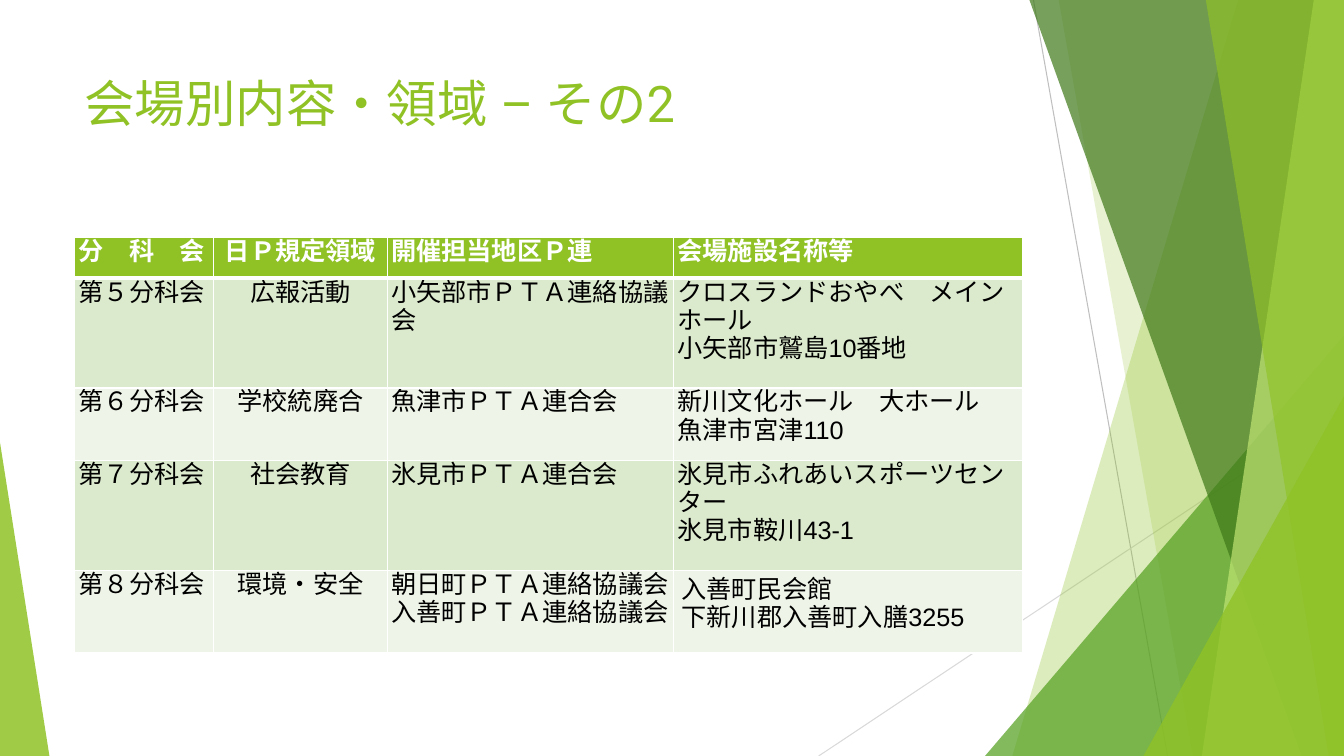
from dataclasses import dataclass

from lxml import etree
from pptx import Presentation
from pptx.dml.color import RGBColor
from pptx.enum.shapes import MSO_CONNECTOR, MSO_SHAPE
from pptx.enum.text import MSO_ANCHOR, PP_ALIGN
from pptx.oxml.ns import qn
from pptx.util import Pt

PX = 9144  # EMU per px, 100 px to the inch
WIDTH, HEIGHT = 1333, 750
TRIANGLE = MSO_SHAPE.ISOSCELES_TRIANGLE
STRAIGHT = MSO_CONNECTOR.STRAIGHT
CENTER, LEFT = PP_ALIGN.CENTER, PP_ALIGN.LEFT
TOP = MSO_ANCHOR.TOP
GREEN, WHITE, BLACK = "90C226", "FFFFFF", "000000"
BAND_FILLS = ("DBE9CD", "EEF4E8")


@dataclass
class Ray:
    start: tuple[int, int]
    end: tuple[int, int]
    color: str


@dataclass
class Band:
    """A facet reaching the right edge, with a slanted left side."""
    top_x: int
    bottom_x: int
    color: str
    opacity: int


@dataclass
class Triangle:
    left: int
    top: int
    width: int
    apex: float
    color: str
    opacity: int


RAYS = [
    Ray((1025, 0), (1158, HEIGHT), "BFBFBF"),
    Ray((WIDTH, 403), (812, HEIGHT), "D9D9D9"),
]
FACETS = [
    Band(1228, 1004, GREEN, 30),
    Band(1050, 1183, GREEN, 20),
    Triangle(977, 333, 356, 1, "54A021", 72),
    Band(1021, 1291, "3F7819", 70),
    Band(1303, 1192, "C0E474", 70),
    Band(1196, 1318, GREEN, 65),
    Triangle(1134, 393, 199, 1, GREEN, 80),
    Triangle(0, 439, 49, 0, GREEN, 85),
]

TITLE = "会場別内容・領域 – その2"
COLUMN_WIDTHS = [138, 172, 284, 346]
ROW_HEIGHTS = [40, 109, 72, 109, 82]
ROWS = [
    ["分　科　会", "日Ｐ規定領域", "開催担当地区Ｐ連", "会場施設名称等"],
    ["第５分科会", "広報活動", "小矢部市ＰＴＡ連絡協議会",
     "クロスランドおやべ　メインホール\n小矢部市鷲島10番地"],
    ["第６分科会", "学校統廃合", "魚津市ＰＴＡ連合会",
     "新川文化ホール　大ホール\n魚津市宮津110"],
    ["第７分科会", "社会教育", "氷見市ＰＴＡ連合会",
     "氷見市ふれあいスポーツセンター\n氷見市鞍川43-1"],
    ["第８分科会", "環境・安全", "朝日町ＰＴＡ連絡協議会\n入善町ＰＴＡ連絡協議会",
     "入善町民会館\n下新川郡入善町入膳3255"],
]


def rgb(color: str) -> RGBColor:
    return RGBColor.from_string(color)


def draw_ray(slide, ray: Ray) -> None:
    points = [value * PX for value in (*ray.start, *ray.end)]
    connector = slide.shapes.add_connector(STRAIGHT, *points)
    connector.line.color.rgb = rgb(ray.color)
    connector.line.width = Pt(0.75)
    etree.SubElement(connector._element.spPr, qn("a:effectLst"))


def draw_facet(slide, facet: Band | Triangle) -> None:
    if isinstance(facet, Band):
        builder = slide.shapes.build_freeform(facet.top_x, 0, scale=PX)
        builder.add_line_segments(
            [(WIDTH, 0), (WIDTH, HEIGHT), (facet.bottom_x, HEIGHT)])
        shape = builder.convert_to_shape()
    else:
        shape = slide.shapes.add_shape(
            TRIANGLE, facet.left * PX, facet.top * PX,
            facet.width * PX, (HEIGHT - facet.top) * PX)
        shape.adjustments[0] = facet.apex
    shape.shadow.inherit = False
    shape.line.fill.background()
    shape.fill.solid()
    shape.fill.fore_color.rgb = rgb(facet.color)
    color_element = shape._element.spPr.find(f"{qn('a:solidFill')}/{qn('a:srgbClr')}")
    etree.SubElement(color_element, qn("a:alpha"), val=str(facet.opacity * 1000))


def style_paragraph(paragraph, font: str, size: int, color: str,
                    bold: bool = False, alignment=LEFT) -> None:
    paragraph.alignment = alignment
    paragraph.font.name = font
    paragraph.font.size = Pt(size)
    paragraph.font.bold = bold
    paragraph.font.color.rgb = rgb(color)
    # East Asian characters take their typeface from a separate element
    for run in paragraph.runs:
        etree.SubElement(run._r.get_or_add_rPr(), qn("a:ea"), typeface=font)


def draw_title(slide) -> None:
    box = slide.shapes.add_textbox(74 * PX, 67 * PX, 940 * PX, 144 * PX)
    frame = box.text_frame
    frame.word_wrap = True
    frame.vertical_anchor = TOP
    frame.text = TITLE
    style_paragraph(frame.paragraphs[0], "Roboto", 36, GREEN)


def add_borders(cell, bottom_width: int) -> None:
    properties = cell._tc.get_or_add_tcPr()
    for side, width in (("L", 1), ("R", 1), ("T", 1), ("B", bottom_width)):
        line = etree.SubElement(properties, qn(f"a:ln{side}"), w=str(Pt(width)))
        fill = etree.SubElement(line, qn("a:solidFill"))
        etree.SubElement(fill, qn("a:srgbClr"), val=WHITE)


def fill_cell(cell, text: str, row: int, column: int) -> None:
    header = row == 0
    last = row == len(ROWS) - 1 and column == len(COLUMN_WIDTHS) - 1
    add_borders(cell, 3 if header else 1)
    cell.fill.solid()
    cell.fill.fore_color.rgb = rgb(GREEN if header else BAND_FILLS[(row - 1) % 2])
    cell.margin_left = cell.margin_right = (8 if last else 4) * PX
    cell.margin_top = cell.margin_bottom = (5 if last else 0) * PX
    cell.text = text
    for paragraph in cell.text_frame.paragraphs:
        style_paragraph(paragraph, "Arial", 18, WHITE if header else BLACK,
                        header, CENTER if column == 1 else LEFT)


def draw_table(slide) -> None:
    table = slide.shapes.add_table(
        len(ROWS), len(COLUMN_WIDTHS), 74 * PX, 236 * PX,
        sum(COLUMN_WIDTHS) * PX, sum(ROW_HEIGHTS) * PX).table
    for column, width in zip(table.columns, COLUMN_WIDTHS):
        column.width = width * PX
    for row, height in zip(table.rows, ROW_HEIGHTS):
        row.height = height * PX
    for row, texts in enumerate(ROWS):
        for column, text in enumerate(texts):
            fill_cell(table.cell(row, column), text, row, column)


def main() -> None:
    presentation = Presentation()
    presentation.slide_width = WIDTH * PX
    presentation.slide_height = HEIGHT * PX
    slide = presentation.slides.add_slide(presentation.slide_layouts[6])
    for ray in RAYS:
        draw_ray(slide, ray)
    for facet in FACETS:
        draw_facet(slide, facet)
    draw_title(slide)
    draw_table(slide)
    presentation.save("out.pptx")


if __name__ == "__main__":
    main()
